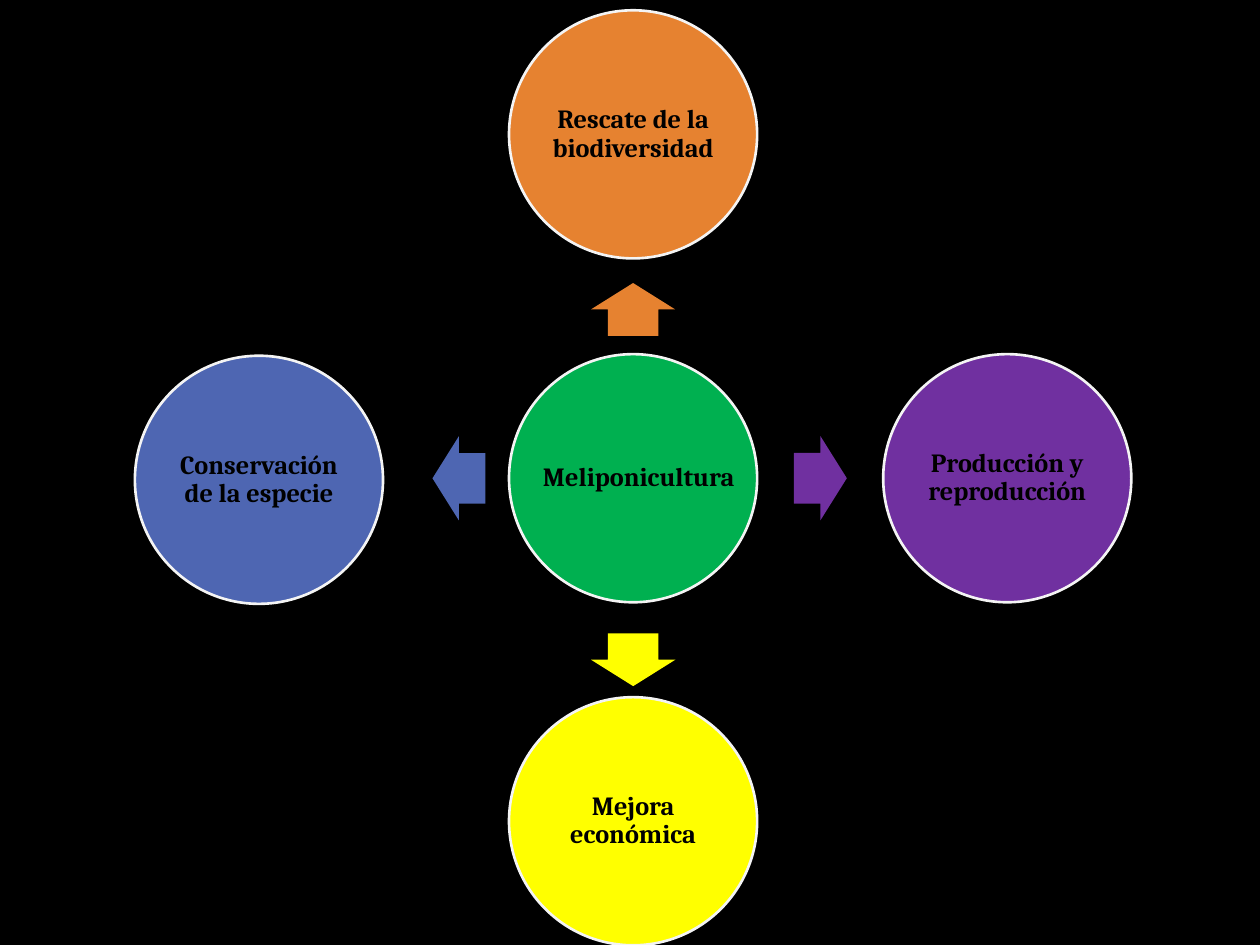
from pptx import Presentation
from pptx.dml.color import RGBColor
from pptx.enum.shapes import MSO_SHAPE
from pptx.enum.text import MSO_ANCHOR, PP_ALIGN
from pptx.util import Pt

COLORS = {
    "background": "000000",
    "text": "000000",
    "outline": "F4F4F4",
    "green": "00B050",
    "orange": "E68230",
    "purple": "7030A0",
    "yellow": "FFFF00",
    "blue": "4E66B2",
}
CENTER_X, CENTER_Y = 361.8, 273.3
DIAMETER = 141.8
LABEL_SIZE = 100.2
ARROW_LENGTH, ARROW_WIDTH = 30.2, 48.2

# label, color, circle offset (x, y), arrow offset (x, y), arrow rotation
GOALS = [
    ("Rescate de la biodiversidad", "orange", (0, -196.5), (0, -96.5), 270),
    ("Producción y reproducción", "purple", (213.8, 0), (107, 0), 0),
    ("Mejora económica", "yellow", (0, 196), (0, 103.7), 90),
    ("Conservación de la especie", "blue", (-213.8, 0.9), (-99.6, 0), 180),
]


def color(name):
    return RGBColor.from_string(COLORS[name])


def centered_box(x, y, width, height):
    """Return left, top, width and height of a box centered on x, y."""
    return Pt(x - width / 2), Pt(y - height / 2), Pt(width), Pt(height)


def add_filled_shape(slide, kind, box, fill):
    shape = slide.shapes.add_shape(kind, *box)
    shape.shadow.inherit = False
    shape.fill.solid()
    shape.fill.fore_color.rgb = color(fill)
    shape.line.fill.background()
    return shape


def add_label(slide, text, box):
    text_frame = slide.shapes.add_textbox(*box).text_frame
    text_frame.word_wrap = True
    text_frame.vertical_anchor = MSO_ANCHOR.MIDDLE
    text_frame.margin_left = text_frame.margin_right = Pt(1.5)
    text_frame.margin_top = text_frame.margin_bottom = Pt(1.5)
    text_frame.text = text
    paragraph = text_frame.paragraphs[0]
    paragraph.alignment = PP_ALIGN.CENTER
    paragraph.line_spacing = 0.9
    font = paragraph.runs[0].font
    font.name = "Cambria"
    font.size = Pt(15)
    font.bold = True
    font.color.rgb = color("text")


def add_circle(slide, text, fill, x, y, label_width=LABEL_SIZE, label_shift=0):
    circle = add_filled_shape(
        slide, MSO_SHAPE.OVAL, centered_box(x, y, DIAMETER, DIAMETER), fill
    )
    circle.line.color.rgb = color("outline")
    circle.line.width = Pt(1.5)
    add_label(slide, text, centered_box(x + label_shift, y, label_width, LABEL_SIZE))


def add_arrow(slide, fill, x, y, rotation):
    arrow = add_filled_shape(
        slide, MSO_SHAPE.RIGHT_ARROW, centered_box(x, y, ARROW_LENGTH, ARROW_WIDTH), fill
    )
    arrow.adjustments[0] = 0.6
    arrow.adjustments[1] = 0.5
    arrow.rotation = rotation


def main():
    presentation = Presentation()
    presentation.slide_width = Pt(720)
    presentation.slide_height = Pt(540)
    slide = presentation.slides.add_slide(presentation.slide_layouts[6])
    slide.background.fill.solid()
    slide.background.fill.fore_color.rgb = color("background")

    add_circle(slide, "Meliponicultura", "green", CENTER_X, CENTER_Y,
               label_width=121, label_shift=3.2)
    for text, fill, (circle_x, circle_y), (arrow_x, arrow_y), rotation in GOALS:
        add_circle(slide, text, fill, CENTER_X + circle_x, CENTER_Y + circle_y)
        add_arrow(slide, fill, CENTER_X + arrow_x, CENTER_Y + arrow_y, rotation)

    presentation.save("out.pptx")


if __name__ == "__main__":
    main()
